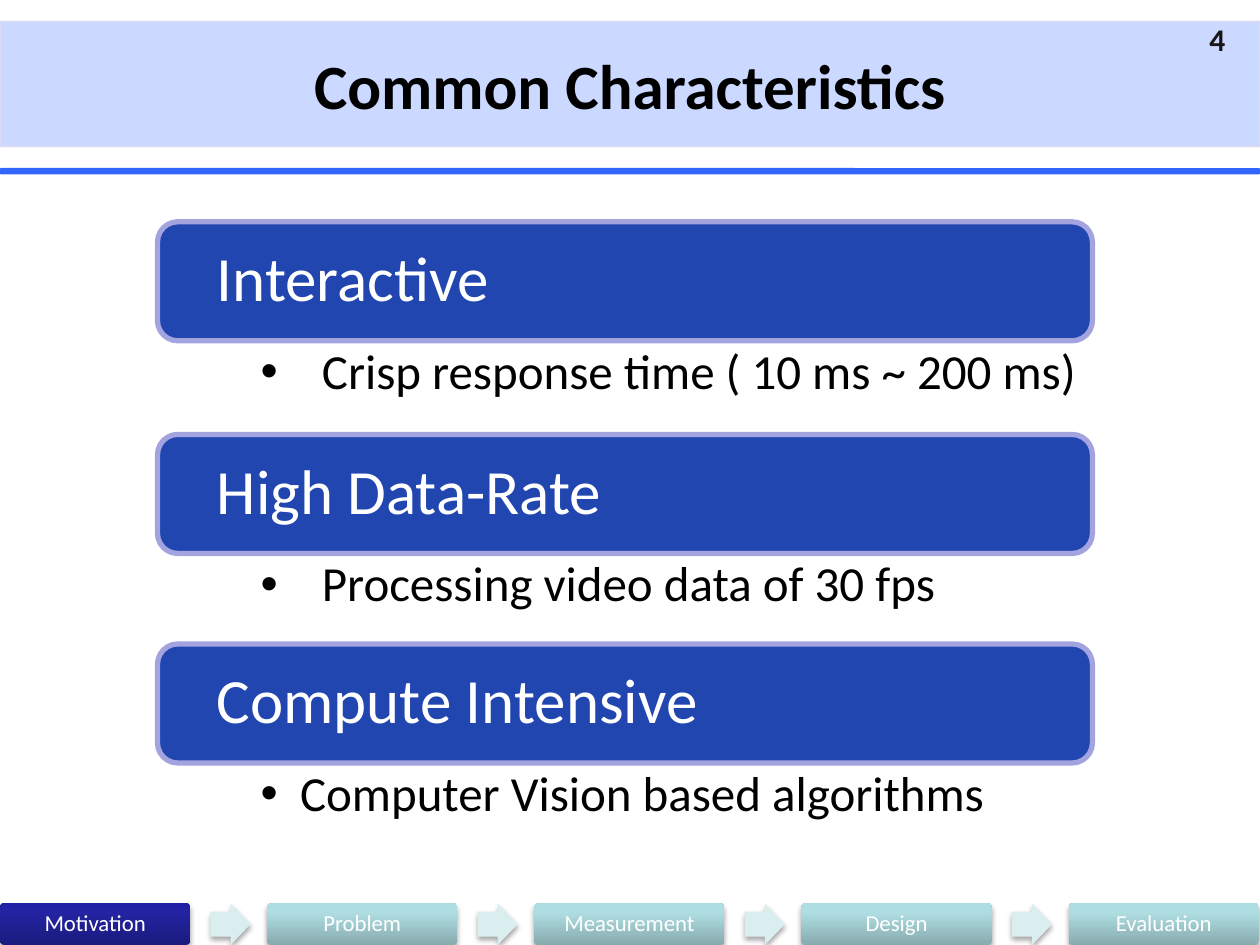
from dataclasses import dataclass

from lxml.etree import SubElement
from pptx import Presentation
from pptx.dml.color import RGBColor
from pptx.enum.shapes import MSO_SHAPE as Shape
from pptx.enum.text import MSO_ANCHOR as Anchor, PP_ALIGN as Align
from pptx.oxml import parse_xml
from pptx.oxml.ns import nsdecls, qn
from pptx.util import Pt

TITLE = "Common Characteristics"
PAGE = "4"
# heading, detail, top of the heading, indent of the detail
TRAITS = [
    ("Interactive", "Crisp response time ( 10 ms ~ 200 ms)", 126.75, 35),
    ("High Data-Rate", "Processing video data of 30 fps", 248.25, 35),
    ("Compute Intensive", "Computer Vision based algorithms", 368, 22.5),
]
STAGES = ["Motivation", "Problem", "Measurement", "Design", "Evaluation"]
CURRENT_STAGE = "Motivation"


@dataclass(frozen=True)
class Theme:
    font: str = "Calibri"
    accent: str = "3366FF"
    title_line: str = "FFE4E5"
    page: str = "161616"
    heading: str = "2246B0"
    heading_line: str = "A3A3E0"
    arrow: str = "DAEDEF"
    active: tuple = ("1B1B7E", "2323A3", "2020A6")
    inactive: tuple = ("87ABAE", "AFDEE2", "AFE0E4")
    light: str = "FFFFFF"
    dark: str = "000000"
    big: int = 36
    body: int = 28
    number: int = 18
    small: int = 13


T = Theme()
SLIDE_W, SLIDE_H = 720, 540
HEAD_X, HEAD_W, HEAD_H = 90, 534.25, 68
DETAIL_X, DETAIL_W, DETAIL_H = 132, 510, 47
STAGE_W, STAGE_H, STAGE_STEP = 108.7, 23.75, 152.65
ARROW_X, ARROW_W = 120.25, 23
SHADOW = (
    f'<a:effectLst {nsdecls("a")}><a:outerShdw blurRad="39370" dist="22860" '
    'dir="5400000" rotWithShape="0"><a:srgbClr val="000000">'
    '<a:alpha val="35000"/></a:srgbClr></a:outerShdw></a:effectLst>'
)


def add_shape(kind, box, fill, line=None, width=1, radius=None):
    sp = slide.shapes.add_shape(kind, *map(Pt, box))
    sp.shadow.inherit = False
    sp.fill.solid()
    sp.fill.fore_color.rgb = RGBColor.from_string(fill)
    if line:
        sp.line.color.rgb = RGBColor.from_string(line)
        sp.line.width = Pt(width)
    else:
        sp.line.fill.background()
    if radius is not None:
        sp.adjustments[0] = radius
    return sp


def add_box(box):
    return slide.shapes.add_textbox(*map(Pt, box))


def write(sp, text, size, color, align=Align.LEFT, anchor=Anchor.MIDDLE,
          insets=(7.2, 3.6, 7.2, 3.6), bold=False, spacing=0.9):
    tf = sp.text_frame
    tf.word_wrap = True
    tf.vertical_anchor = anchor
    tf.margin_left, tf.margin_top, tf.margin_right, tf.margin_bottom = map(Pt, insets)
    tf.text = text
    p = tf.paragraphs[0]
    p.alignment = align
    p.line_spacing = spacing
    font = p.runs[0].font
    font.name, font.size, font.bold = T.font, Pt(size), bold
    font.color.rgb = RGBColor.from_string(color)
    return p


def set_alpha(fill, percent):
    """Make the colour of a solid fill or line partly transparent."""
    color = fill.find(f".//{qn('a:srgbClr')}")
    SubElement(color, qn("a:alpha"), val=str(percent * 1000))


def add_shadow(sp):
    spPr = sp._element.spPr
    spPr.replace(spPr.find(qn("a:effectLst")), parse_xml(SHADOW))


def set_gradient(sp, colors):
    """Shade a shape upwards from the first colour to the last."""
    stops = "".join(
        f'<a:gs pos="{pos}000"><a:srgbClr val="{color}"/></a:gs>'
        for pos, color in zip((0, 80, 100), colors))
    spPr = sp._element.spPr
    spPr.replace(spPr.find(qn("a:solidFill")), parse_xml(
        f'<a:gradFill {nsdecls("a")} rotWithShape="1"><a:gsLst>{stops}</a:gsLst>'
        '<a:lin ang="16200000" scaled="0"/></a:gradFill>'))


def add_bullet(p, indent):
    pPr = p._p.get_or_add_pPr()
    pPr.set("marL", str(Pt(indent)))
    pPr.set("indent", str(-Pt(indent)))
    SubElement(pPr, qn("a:buFont"), typeface="Arial")
    SubElement(pPr, qn("a:buChar"), char="•")


def add_header():
    add_shape(Shape.ROUNDED_RECTANGLE, (0, 96, SLIDE_W, 3.6), T.accent, radius=0.17)
    band = add_shape(Shape.RECTANGLE, (0, 12, SLIDE_W, 72), T.accent, T.title_line)
    spPr = band._element.spPr
    set_alpha(spPr.find(qn("a:solidFill")), 25)
    set_alpha(spPr.find(qn("a:ln")), 30)
    write(band, TITLE, T.big, T.dark, Align.CENTER, bold=True, spacing=1)
    number = write(add_box((684, 12, 36, 24)), PAGE, T.number, T.page,
                   bold=True, spacing=0.8)
    rPr = number.runs[0]._r.get_or_add_rPr()
    rPr.find(qn("a:solidFill")).addnext(parse_xml(SHADOW))


def add_trait(heading, detail, top, indent):
    bar = add_shape(Shape.ROUNDED_RECTANGLE, (HEAD_X, top, HEAD_W, HEAD_H),
                    T.heading, T.heading_line, 3, radius=0.17)
    write(bar, heading, T.big, T.light, insets=(30.5, 14.4, 14.4, 14.4))
    box = add_box((DETAIL_X, top + HEAD_H, DETAIL_W, DETAIL_H))
    p = write(box, detail, T.body, T.dark, anchor=Anchor.TOP,
              insets=(17, 3.6, 7.2, 3.6))
    add_bullet(p, indent)


def add_stages():
    top = SLIDE_H - STAGE_H
    for i, stage in enumerate(STAGES):
        left = i * STAGE_STEP
        sp = add_shape(Shape.ROUNDED_RECTANGLE, (left, top, STAGE_W, STAGE_H),
                       T.light, radius=0.1)
        set_gradient(sp, T.active if stage == CURRENT_STAGE else T.inactive)
        add_shadow(sp)
        write(sp, stage, T.small, T.light, Align.CENTER, insets=(3.6,) * 4)
        if i < len(STAGES) - 1:
            arrow = add_shape(Shape.RIGHT_ARROW,
                              (left + ARROW_X, top, ARROW_W, STAGE_H),
                              T.arrow, radius=0.6)
            add_shadow(arrow)


prs = Presentation()
prs.slide_width, prs.slide_height = Pt(SLIDE_W), Pt(SLIDE_H)
slide = prs.slides.add_slide(prs.slide_layouts[6])
add_header()
add_stages()
for trait in TRAITS:
    add_trait(*trait)
prs.save("out.pptx")
